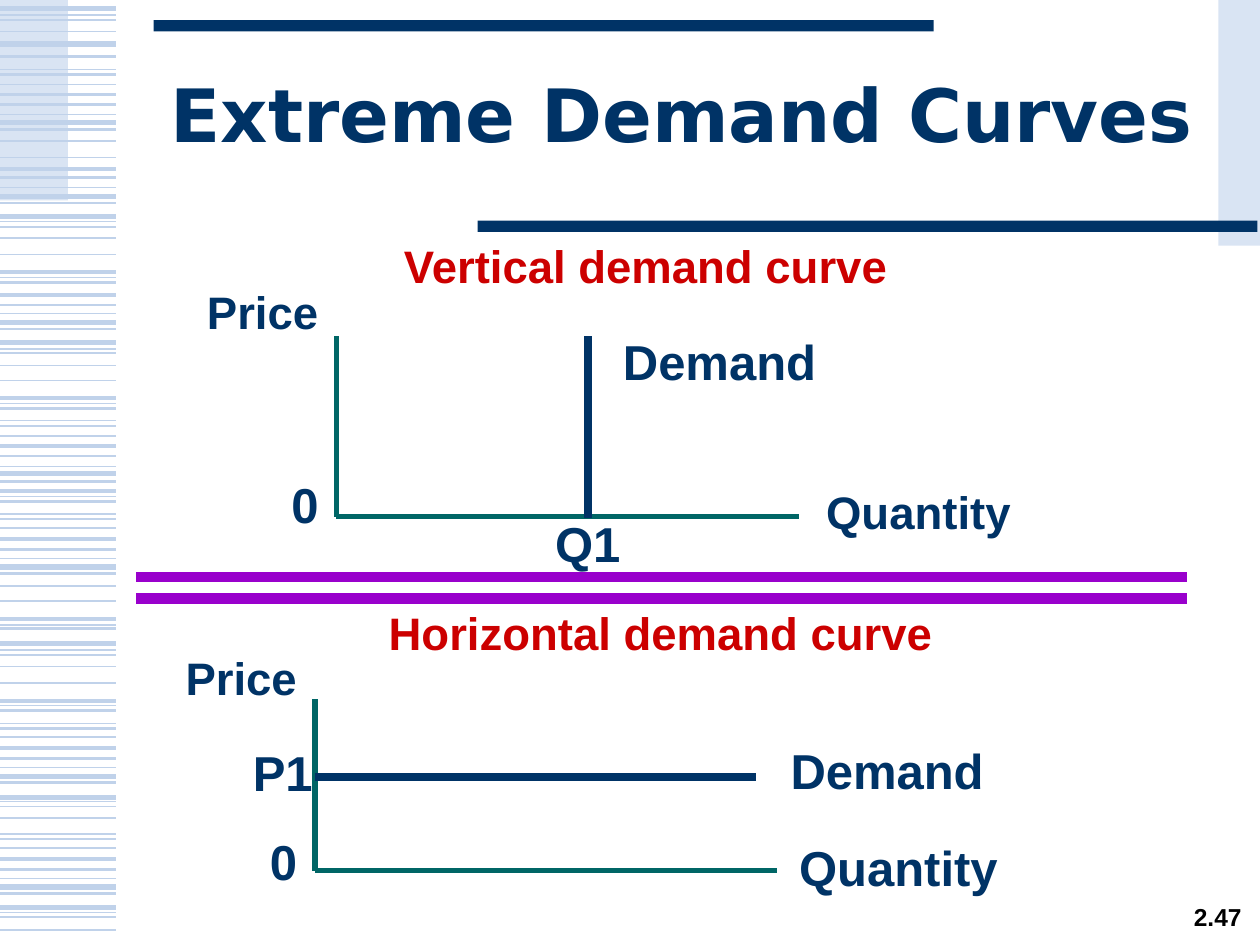
from dataclasses import dataclass

from lxml.etree import SubElement
from pptx import Presentation
from pptx.dml.color import RGBColor
from pptx.enum.shapes import MSO_CONNECTOR, MSO_SHAPE
from pptx.enum.text import MSO_ANCHOR, MSO_AUTO_SIZE, PP_ALIGN
from pptx.oxml.ns import qn
from pptx.util import Inches, Pt

COLORS = {
    "navy": "003366",
    "red": "CC0000",
    "teal": "006666",
    "purple": "9900CC",
    "pale": "D9E4F3",
    "stripe": "C0D2EA",
    "black": "000000",
}
STRIPE_WIDTH = 0.92
AXIS_LENGTH = 3.67

# Heights of the side stripes, by line weight in points
STRIPES = {
    0.75: [0.12, 0.55, 0.91, 1.49, 1.76, 2.2, 2.49, 2.77, 3.2, 3.34, 3.7, 3.94,
           4.08, 4.43, 4.96, 5.16, 5.6, 5.74, 6.09, 6.36, 6.97, 7.24],
    1: [0.16, 0.25, 0.67, 1.12, 1.25, 1.8, 1.89, 2.02, 2.8, 2.9, 3.02, 3.46, 4.19,
        4.65, 4.77, 5.2, 5.29, 5.42, 5.85, 6.4, 6.49, 6.62, 6.73, 7.28, 7.38],
    1.5: [0.45, 0.59, 0.83, 1.03, 1.41, 1.61, 2.24, 2.42, 2.61, 3.24, 3.38, 3.62, 3.82,
          3.98, 4.12, 4.36, 4.55, 4.99, 5.64, 5.78, 6.02, 6.21, 6.66, 6.9, 7.09],
    2.25: [0.75, 1.34, 2.16, 2.34, 3.16, 3.54, 3.9, 4.28, 4.91, 5.56, 5.94, 6.82],
    3: [0.07, 0.35, 0.97, 1.56, 1.72, 2.56, 2.72, 3.76, 4.5, 5.11, 6.16, 6.33,
        7.04, 7.2],
}


@dataclass
class Block:
    left: float
    top: float
    width: float
    height: float
    color: str


@dataclass
class Line:
    x1: float
    y1: float
    x2: float
    y2: float
    color: str
    weight: float


@dataclass
class Label:
    text: str
    left: float
    top: float
    width: float
    height: float
    size: float = 28
    color: str = "navy"
    spacing: float = 0.8


@dataclass
class Diagram:
    origin_x: float
    origin_y: float
    axis_top: float
    demand: Line
    labels: list[Label]


BLOCKS = [
    Block(0, 0, 0.54, 1.59, "pale"),
    Block(1.22, 0.16, 6.19, 0.09, "navy"),
    Block(9.67, 0, 0.33, 1.95, "pale"),
    Block(3.79, 1.75, 6.19, 0.09, "navy"),
]
DIAGRAMS = [
    Diagram(2.67, 4.1, 2.67, Line(4.67, 2.67, 4.67, 4.11, "navy", 4.5), [
        Label("Vertical demand curve", 3, 1.92, 4.25, 0.45, 26, "red"),
        Label("Price", 1.5, 2.29, 1.17, 0.45, 26),
        Label("Demand", 4.75, 2.67, 1.92, 0.47),
        Label("0", 2.17, 3.72, 0.5, 0.57, spacing=1),
        Label("Q1", 4.25, 4.03, 0.83, 0.57, spacing=1),
        Label("Quantity", 6.33, 3.88, 1.92, 0.45, 26),
    ]),
    Diagram(2.5, 6.91, 5.55, Line(2.5, 6.17, 6, 6.17, "navy", 4.5), [
        Label("Horizontal demand curve", 2.83, 4.84, 4.83, 0.45, 26, "red"),
        Label("Price", 1.33, 5.19, 1.17, 0.45, 26),
        Label("P1", 1.83, 5.84, 0.83, 0.57, spacing=1),
        Label("Demand", 6.08, 5.92, 1.92, 0.47),
        Label("0", 2, 6.55, 0.5, 0.57, spacing=1),
        Label("Quantity", 6.17, 6.69, 1.92, 0.47),
    ]),
]


def rgb(name: str) -> RGBColor:
    return RGBColor.from_string(COLORS[name])


def add_block(shapes, block: Block) -> None:
    bar = shapes.add_shape(
        MSO_SHAPE.RECTANGLE, Inches(block.left), Inches(block.top),
        Inches(block.width), Inches(block.height),
    )
    bar.shadow.inherit = False
    bar.fill.solid()
    bar.fill.fore_color.rgb = rgb(block.color)
    bar.line.fill.background()


def add_line(shapes, line: Line) -> None:
    connector = shapes.add_connector(
        MSO_CONNECTOR.STRAIGHT, Inches(line.x1), Inches(line.y1),
        Inches(line.x2), Inches(line.y2),
    )
    connector.line.color.rgb = rgb(line.color)
    connector.line.width = Pt(line.weight)
    SubElement(connector._element.spPr, qn("a:effectLst"))


def format_text(frame, text: str, font: str, size: float, color: str, spacing: float) -> None:
    """Fill a frame with one bold, centred paragraph."""
    frame.text = text
    para = frame.paragraphs[0]
    para.alignment = PP_ALIGN.CENTER
    para.line_spacing = spacing
    para.space_before = Pt(0)
    span = para.runs[0].font
    span.name, span.size, span.bold = font, Pt(size), True
    span.color.rgb = rgb(color)


def add_label(shapes, label: Label):
    box = shapes.add_textbox(
        Inches(label.left), Inches(label.top), Inches(label.width), Inches(label.height)
    )
    frame = box.text_frame
    frame.word_wrap = True
    frame.auto_size = MSO_AUTO_SIZE.SHAPE_TO_FIT_TEXT
    format_text(frame, label.text, "Arial", label.size, label.color, label.spacing)
    return box


def add_diagram(shapes, diagram: Diagram) -> None:
    group = shapes.add_group_shape().shapes
    x, y = diagram.origin_x, diagram.origin_y
    add_line(group, Line(x, diagram.axis_top, x, y, "teal", 3))
    add_line(group, Line(x, y, x + AXIS_LENGTH, y, "teal", 3))
    add_line(group, diagram.demand)
    for label in diagram.labels:
        add_label(group, label)


def add_title(page) -> None:
    title = page.shapes.title
    title.left, title.top = Inches(1.25), Inches(0.33)
    title.width, title.height = Inches(8.32), Inches(1.25)
    frame = title.text_frame
    frame.word_wrap = True
    frame.auto_size = MSO_AUTO_SIZE.NONE
    frame.vertical_anchor = MSO_ANCHOR.MIDDLE
    format_text(frame, "Extreme Demand Curves", "DejaVu Sans", 42, "navy", 0.85)


def add_page_number(shapes) -> None:
    box = add_label(shapes, Label("2.47", 9.33, 7.17, 0.67, 0.27, 14, "black", 0.7))
    box.text_frame.word_wrap = False
    box.text_frame.auto_size = MSO_AUTO_SIZE.NONE
    box.text_frame.vertical_anchor = MSO_ANCHOR.MIDDLE


def main() -> None:
    deck = Presentation()
    deck.slide_width, deck.slide_height = Inches(10), Inches(7.5)
    page = deck.slides.add_slide(deck.slide_layouts[5])
    for block in BLOCKS:
        add_block(page.shapes, block)
    stripes = page.shapes.add_group_shape().shapes
    for weight, heights in STRIPES.items():
        for y in heights:
            add_line(stripes, Line(0, y, STRIPE_WIDTH, y, "stripe", weight))
    add_title(page)
    for y in (4.58, 4.75):
        add_line(page.shapes, Line(1.08, y, 9.42, y, "purple", 6))
    for diagram in DIAGRAMS:
        add_diagram(page.shapes, diagram)
    add_page_number(page.shapes)
    deck.save("out.pptx")


if __name__ == "__main__":
    main()
